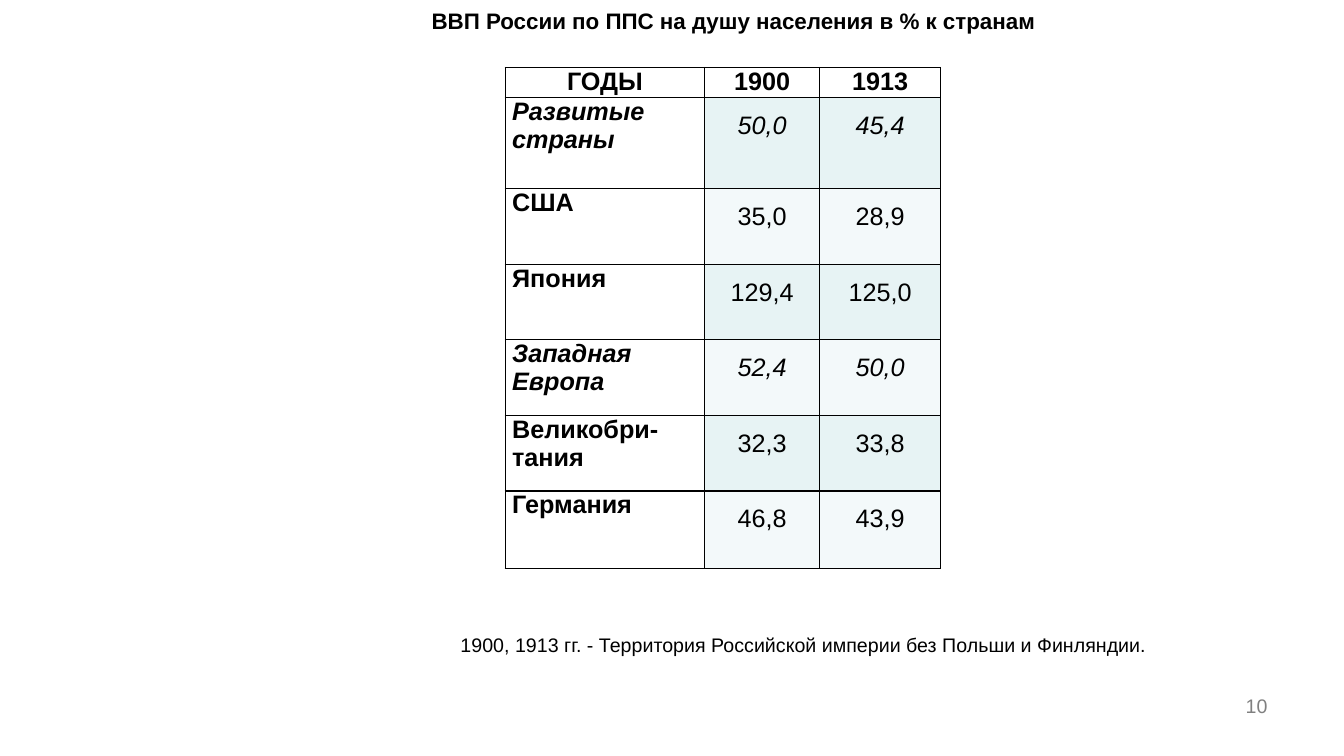
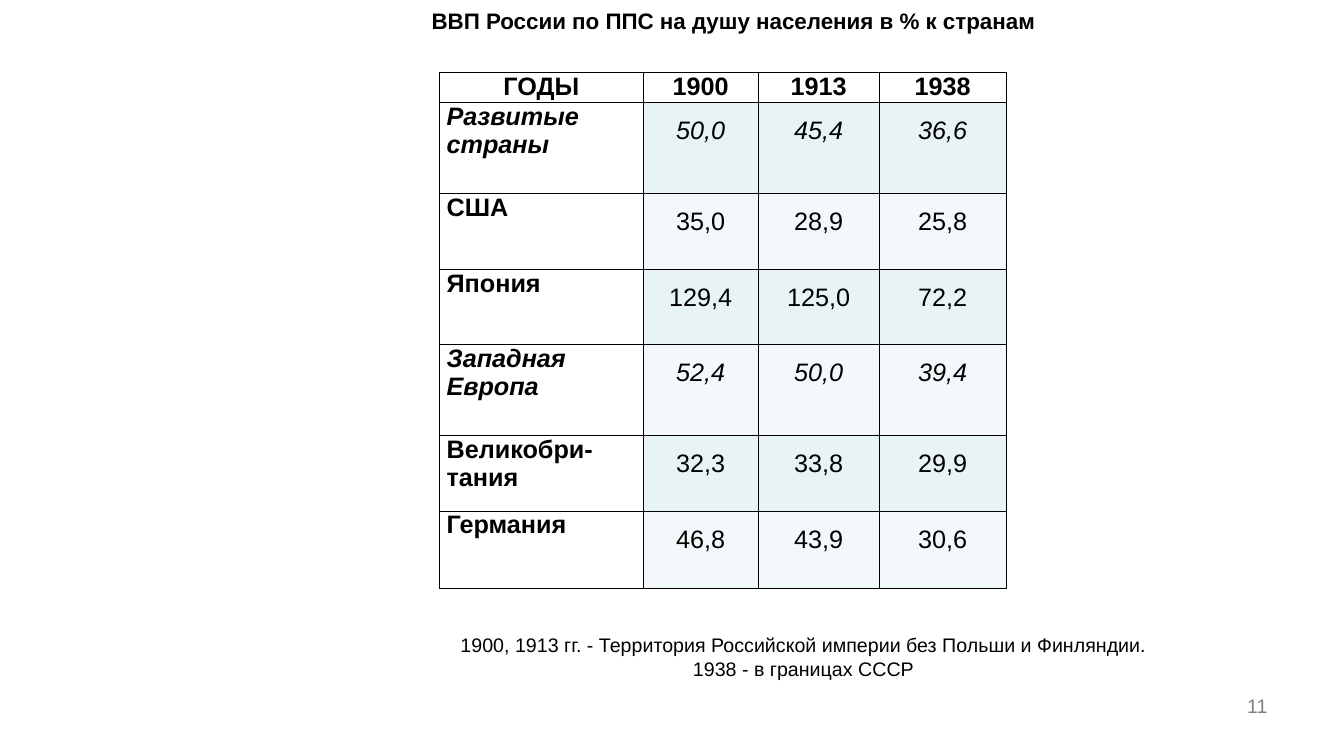
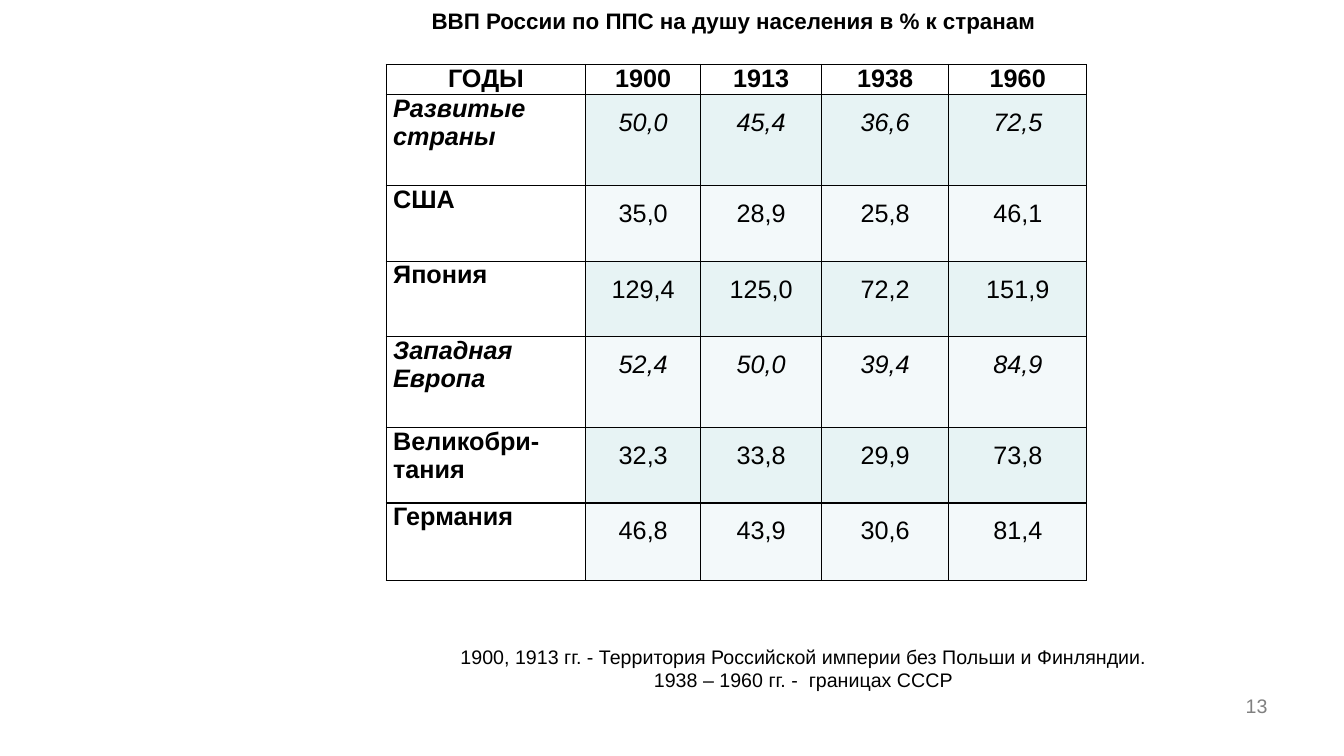
from itertools import accumulate

from lxml.etree import SubElement
from pptx import Presentation
from pptx.dml.color import RGBColor
from pptx.enum.text import MSO_ANCHOR, PP_ALIGN
from pptx.oxml.ns import qn
from pptx.util import Inches, Pt

# Shared look
FONT = "Arial"
BLACK = RGBColor(0x00, 0x00, 0x00)
GRAY = RGBColor(0x80, 0x80, 0x80)
BAND_DARK = RGBColor(0xE7, 0xF3, 0xF4)
BAND_LIGHT = RGBColor(0xF3, 0xF9, 0xFA)

# Shared boxes: left, top, width, height in inches
TITLE_BOX = (3.94, 0, 6.47, 0.67)
NOTE_BOX = (3.94, 6.23, 8.06, 1.07)
NUMBER_BOX = (9.56, 6.83, 3.11, 0.52)

TITLE = "ВВП России по ППС на душу населения в % к странам"
EMPIRE_NOTE = "1900, 1913 гг. - Территория Российской империи без Польши и Финляндии."

# Table data: each slide shows the first few years
YEARS = ["1900", "1913", "1938", "1960"]
YEAR_WIDTHS = [1.14, 1.2, 1.26, 1.37]
COUNTRIES = {
    "Развитые страны": ["50,0", "45,4", "36,6", "72,5"],
    "США": ["35,0", "28,9", "25,8", "46,1"],
    "Япония": ["129,4", "125,0", "72,2", "151,9"],
    "Западная Европа": ["52,4", "50,0", "39,4", "84,9"],
    "Великобри- тания": ["32,3", "33,8", "29,9", "73,8"],
    "Германия": ["46,8", "43,9", "30,6", "81,4"],
}
REGIONS = {"Развитые страны", "Западная Европа"}


def format_paragraph(paragraph, size, color=BLACK, align=PP_ALIGN.CENTER,
                     bold=False, italic=False, spacing=None):
    paragraph.alignment = align
    paragraph.line_spacing = spacing
    for run in paragraph.runs:
        font = run.font
        font.name, font.size = FONT, Pt(size)
        font.bold, font.italic = bold, italic
        font.color.rgb = color


def add_title(slide, box):
    title = slide.shapes.title
    title.left, title.top, title.width, title.height = map(Inches, box)
    text_frame = title.text_frame
    text_frame.text = TITLE
    text_frame.vertical_anchor = MSO_ANCHOR.TOP
    text_frame.margin_left = Inches(0.3)
    text_frame.margin_top = Inches(0.07)
    format_paragraph(text_frame.paragraphs[0], 16, bold=True)


def add_text(slide, box, lines, color=BLACK, align=PP_ALIGN.CENTER, first_spacing=None):
    text_frame = slide.shapes.add_textbox(*map(Inches, box)).text_frame
    text_frame.word_wrap = True
    text_frame.text = "\n".join(lines)
    for index, paragraph in enumerate(text_frame.paragraphs):
        format_paragraph(paragraph, 14, color, align,
                         spacing=first_spacing if index == 0 else None)


def add_borders(cell):
    properties = cell._tc.get_or_add_tcPr()
    for side in ("a:lnL", "a:lnR", "a:lnT", "a:lnB"):
        line = SubElement(properties, qn(side), w=str(Pt(1)))
        fill = SubElement(line, qn("a:solidFill"))
        SubElement(fill, qn("a:srgbClr"), val=str(BLACK))


def fill_cell(cell, text, band=None, **style):
    cell.margin_left = cell.margin_right = Inches(0.07)
    cell.margin_top = cell.margin_bottom = 0
    add_borders(cell)
    if band is None:
        cell.fill.background()
    else:
        cell.fill.solid()
        cell.fill.fore_color.rgb = band
    cell.text = text
    format_paragraph(cell.text_frame.paragraphs[0], 18, **style)


def add_gdp_table(slide, left, top, label_width, year_count, europe_height):
    widths = [label_width] + YEAR_WIDTHS[:year_count]
    heights = [0.3, 0.9, 0.75, 0.75, europe_height, 0.75, 0.77]
    frame = slide.shapes.add_table(len(heights), len(widths), Inches(left), Inches(top),
                                   Inches(sum(widths)), Inches(sum(heights)))
    table = frame.table
    table.first_row = table.horz_banding = False
    for column, width in zip(table.columns, widths):
        column.width = Inches(width)
    for row, height in zip(table.rows, heights):
        row.height = Inches(height)

    # Header row
    for column, text in enumerate(["ГОДЫ"] + YEARS[:year_count]):
        fill_cell(table.cell(0, column), text, bold=True)

    # Country rows with alternating bands
    for row, (country, values) in enumerate(COUNTRIES.items(), 1):
        italic = country in REGIONS
        band = BAND_DARK if row % 2 else BAND_LIGHT
        fill_cell(table.cell(row, 0), country, align=PP_ALIGN.JUSTIFY, bold=True, italic=italic)
        for column, value in enumerate(values[:year_count], 1):
            fill_cell(table.cell(row, column), value, band, italic=italic, spacing=1.5)


def add_gdp_slide(presentation, number, table_place, notes, note_spacing=None):
    slide = presentation.slides.add_slide(presentation.slide_layouts[5])
    add_text(slide, NOTE_BOX, [EMPIRE_NOTE] + notes, first_spacing=note_spacing)
    add_text(slide, NUMBER_BOX, [str(number)], GRAY, PP_ALIGN.RIGHT)
    add_gdp_table(slide, *table_place)
    add_title(slide, TITLE_BOX)


def main():
    presentation = Presentation()
    presentation.slide_width, presentation.slide_height = Inches(13.33), Inches(7.5)
    # Table place: left, top, label width, number of years, height of the Europe row
    add_gdp_slide(presentation, 10, (5.01, 0.67, 1.98, 2, 0.75), [])
    add_gdp_slide(presentation, 11, (4.36, 0.72, 2.02, 3, 0.9), ["1938 - в границах СССР"])
    add_gdp_slide(presentation, 13, (3.83, 0.64, 1.98, 4, 0.9),
                  ["1938 – 1960 гг. -  границах СССР"], note_spacing=1.5)
    presentation.save("out.pptx")


if __name__ == "__main__":
    main()
